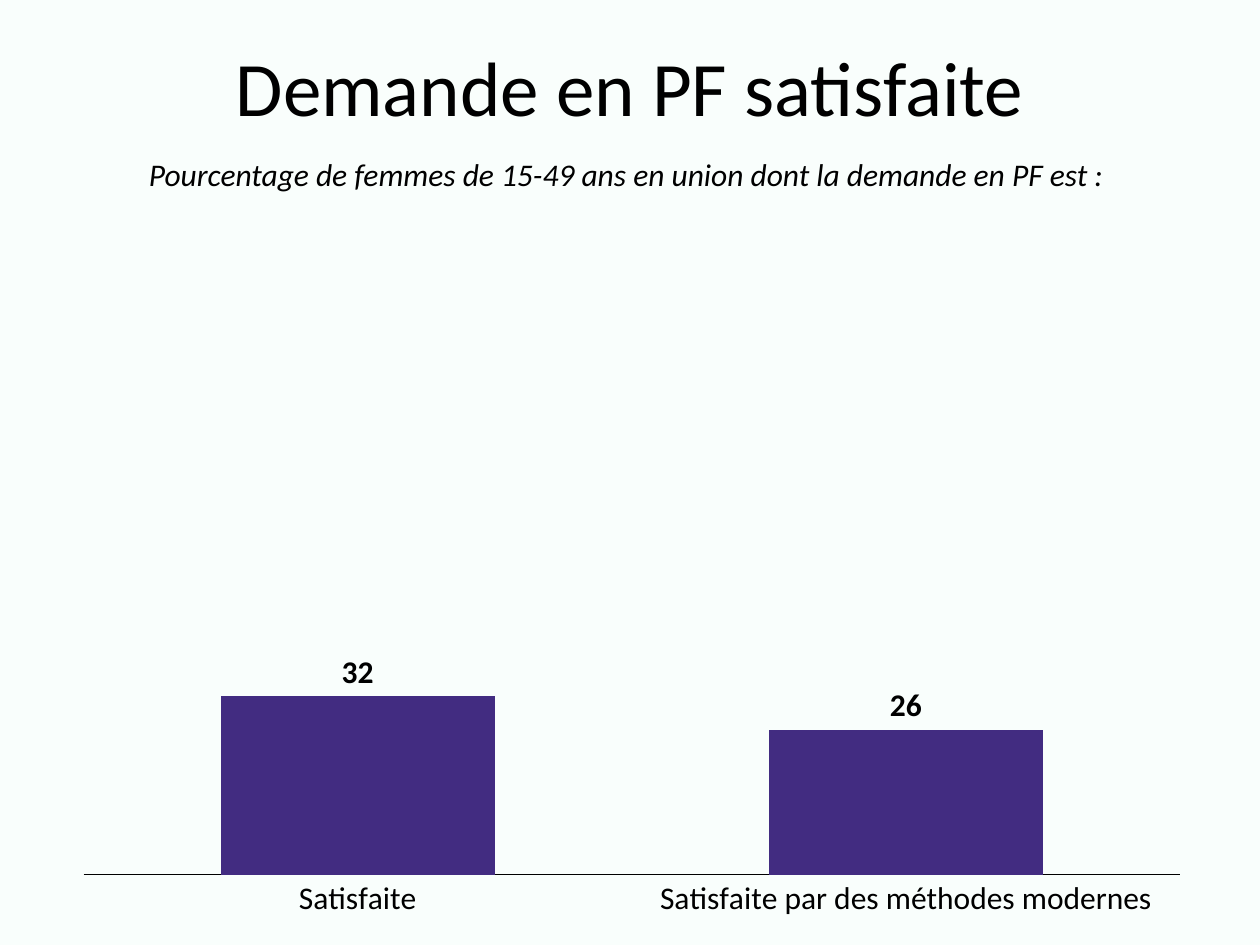
from lxml import etree
from pptx import Presentation
from pptx.chart.data import CategoryChartData
from pptx.dml.color import RGBColor
from pptx.enum.chart import XL_CHART_TYPE, XL_LABEL_POSITION, XL_TICK_LABEL_POSITION, XL_TICK_MARK
from pptx.enum.text import MSO_ANCHOR, PP_ALIGN
from pptx.oxml.ns import qn
from pptx.util import Pt

BACKGROUND = RGBColor(0xF9, 0xFE, 0xFC)
BLACK = RGBColor(0, 0, 0)
PURPLE = RGBColor(0x42, 0x2C, 0x81)
FONT = "Calibri"
SLIDE_WIDTH, SLIDE_HEIGHT = 720, 540


def style_font(font, size, bold=False, italic=False):
    font.name = FONT
    font.size = Pt(size)
    font.bold = bold
    font.italic = italic
    font.color.rgb = BLACK


def add_centred_text(slide, text, top, height, size, italic=False, line_spacing=1.0):
    """Add a line of text centred across the whole slide."""
    box = slide.shapes.add_textbox(Pt(0), Pt(top), Pt(SLIDE_WIDTH), Pt(height))
    frame = box.text_frame
    frame.word_wrap = True
    frame.vertical_anchor = MSO_ANCHOR.MIDDLE
    frame.text = text
    line = frame.paragraphs[0]
    line.alignment = PP_ALIGN.CENTER
    line.line_spacing = line_spacing
    style_font(line.runs[0].font, size, italic=italic)


def set_plot_layout(chart, x, y, w, h):
    """Fix the inner plot area, in fractions of the chart."""
    plot_area = chart.plots[0]._element.getparent()
    for old_layout in plot_area.findall(qn("c:layout")):
        plot_area.remove(old_layout)
    layout = etree.Element(qn("c:layout"))
    manual = etree.SubElement(layout, qn("c:manualLayout"))
    settings = {"layoutTarget": "inner", "xMode": "edge", "yMode": "edge",
                "x": x, "y": y, "w": w, "h": h}
    for tag, value in settings.items():
        etree.SubElement(manual, qn(f"c:{tag}")).set("val", str(value))
    plot_area.insert(0, layout)


def style_axes(chart):
    demand_axis = chart.category_axis
    demand_axis.major_tick_mark = XL_TICK_MARK.NONE
    demand_axis.minor_tick_mark = XL_TICK_MARK.NONE
    demand_axis.tick_label_position = XL_TICK_LABEL_POSITION.NEXT_TO_AXIS
    demand_axis.format.line.color.rgb = BLACK
    demand_axis.format.line.width = Pt(0.75)
    style_font(demand_axis.tick_labels.font, 18)

    percent_axis = chart.value_axis
    percent_axis.minimum_scale = 0
    percent_axis.maximum_scale = 100
    percent_axis.has_major_gridlines = False
    percent_axis.visible = False


def add_demand_chart(slide):
    demand = CategoryChartData(number_format="0")
    demand.categories = ["Satisfaite", "Satisfaite par des méthodes modernes"]
    demand.add_series("Series 1", (32, 26))
    chart = slide.shapes.add_chart(
        XL_CHART_TYPE.COLUMN_CLUSTERED, Pt(36.72), Pt(126.72), Pt(648.72), Pt(413.28), demand
    ).chart
    chart.has_legend = False
    chart.has_title = False
    style_font(chart.font, 10)
    style_axes(chart)

    columns = chart.plots[0]
    columns.gap_width = 100
    columns.vary_by_categories = False
    satisfied = columns.series[0]
    satisfied.format.fill.solid()
    satisfied.format.fill.fore_color.rgb = PURPLE

    labels = satisfied.data_labels
    labels.show_value = True
    labels.position = XL_LABEL_POSITION.OUTSIDE_END
    labels.number_format = "0"
    labels.number_format_is_linked = False
    style_font(labels.font, 18, bold=True)
    set_plot_layout(chart, 0.017, 0.132, 0.966, 0.771)


def main():
    presentation = Presentation()
    presentation.slide_width = Pt(SLIDE_WIDTH)
    presentation.slide_height = Pt(SLIDE_HEIGHT)
    slide = presentation.slides.add_slide(presentation.slide_layouts[6])
    slide.background.fill.solid()
    slide.background.fill.fore_color.rgb = BACKGROUND

    add_centred_text(slide, "Demande en PF satisfaite", 0, 104.4, 44, line_spacing=0.9)
    add_demand_chart(slide)
    add_centred_text(
        slide, "Pourcentage de femmes de 15-49 ans en union dont la demande en PF est : ",
        84.96, 29, 18, italic=True)
    presentation.save("out.pptx")


if __name__ == "__main__":
    main()
